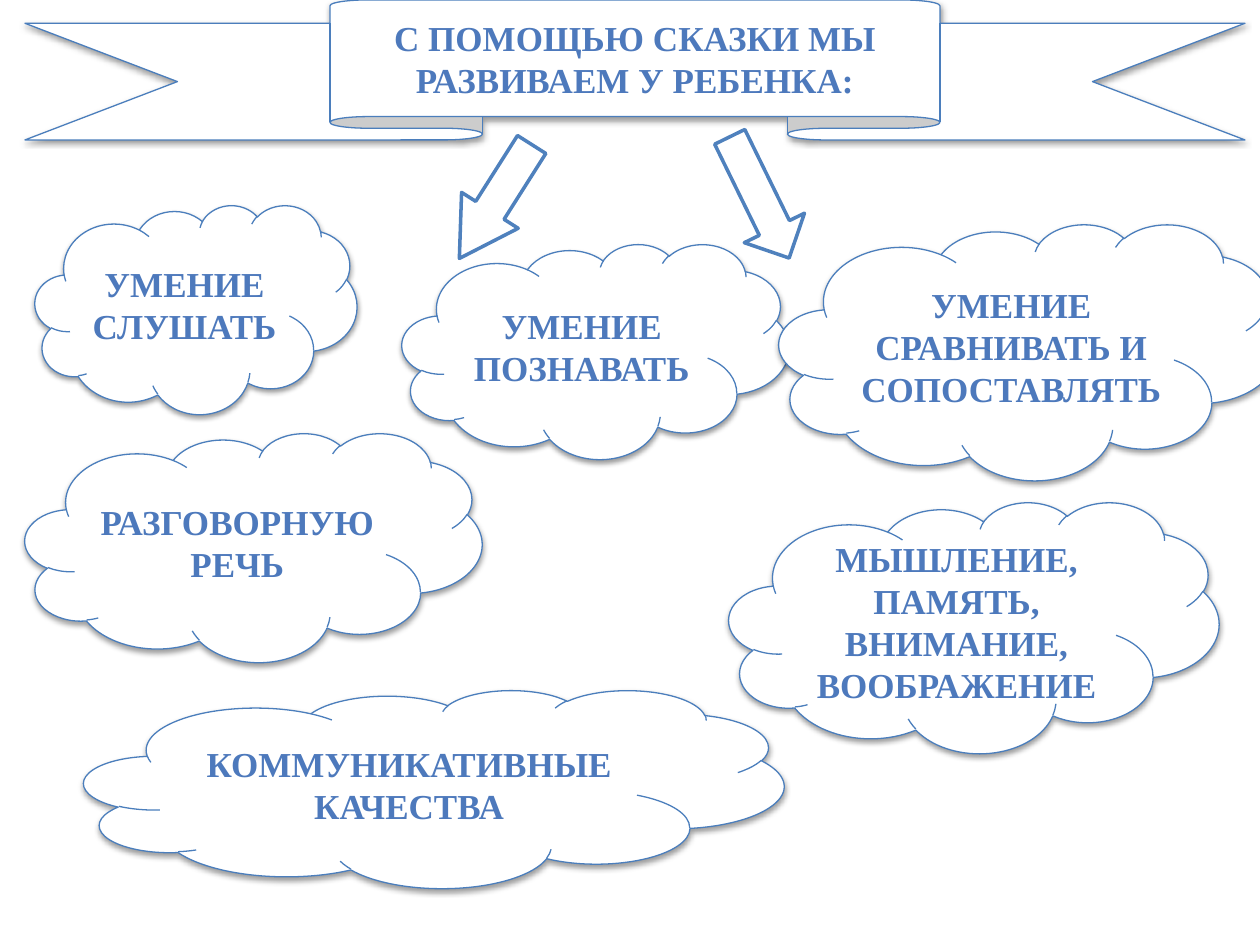
from dataclasses import dataclass

from lxml.etree import SubElement
from pptx import Presentation
from pptx.dml.color import RGBColor
from pptx.enum.shapes import MSO_SHAPE
from pptx.enum.text import MSO_ANCHOR, PP_ALIGN
from pptx.oxml import parse_xml
from pptx.oxml.ns import nsdecls, qn
from pptx.shapes.autoshape import Shape
from pptx.util import Emu, Pt

PIXELS_PER_INCH = 126
COLORS = {
    "paper": "FFFFFF",
    "outline": "4B7EBC",
    "arrow": "4F81BD",
    "shadow": "000000",
}
TEXT_GRADIENT = {0: "7494C9", 49: "4D79BC", 50: "346AAA", 92: "325F94", 100: "315D91"}


@dataclass(frozen=True)
class Box:
    left: int
    top: int
    width: int
    height: int


@dataclass(frozen=True)
class Caption:
    text: str
    box: Box
    preset: MSO_SHAPE = MSO_SHAPE.CLOUD
    side_inset: int = 13


@dataclass(frozen=True)
class Arrow:
    box: Box
    rotation: float
    head: float = 0.5


CAPTIONS = [
    Caption("С ПОМОЩЬЮ СКАЗКИ МЫ РАЗВИВАЕМ У РЕБЕНКА:", Box(25, 0, 1220, 140), MSO_SHAPE.UP_RIBBON),
    Caption("УМЕНИЕ СЛУШАТЬ", Box(35, 205, 322, 209)),
    Caption("УМЕНИЕ ПОЗНАВАТЬ", Box(402, 244, 387, 215)),
    Caption("УМЕНИЕ СРАВНИВАТЬ И СОПОСТАВЛЯТЬ", Box(779, 224, 500, 256)),
    Caption("РАЗГОВОРНУЮ РЕЧЬ", Box(25, 433, 457, 229), side_inset=8),
    Caption("КОММУНИКАТИВНЫЕ КАЧЕСТВА", Box(84, 690, 700, 198)),
    Caption("МЫШЛЕНИЕ, ПАМЯТЬ, ВНИМАНИЕ, ВООБРАЖЕНИЕ", Box(729, 502, 490, 251)),
]
ARROWS = [
    Arrow(Box(462, 134, 67, 135), 32.4, head=0.85),
    Arrow(Box(726, 130, 67, 135), 333.9),
]


def px(value: int) -> Emu:
    return Emu(round(value * 914400 / PIXELS_PER_INCH))


def add_outlined_shape(slide, preset: MSO_SHAPE, box: Box, *, line: str, weight: float) -> Shape:
    shape = slide.shapes.add_shape(
        preset, px(box.left), px(box.top), px(box.width), px(box.height)
    )
    shape.shadow.inherit = False
    shape.fill.solid()
    shape.fill.fore_color.rgb = RGBColor.from_string(COLORS["paper"])
    shape.line.color.rgb = RGBColor.from_string(COLORS[line])
    shape.line.width = Pt(weight)
    return shape


def add_shadow(shape: Shape) -> None:
    effects = shape._element.spPr.find(qn("a:effectLst"))
    shadow = SubElement(
        effects, qn("a:outerShdw"), blurRad=str(Pt(3.1)), dist=str(Pt(1.6)),
        dir="5400000", rotWithShape="0",
    )
    color = SubElement(shadow, qn("a:srgbClr"), val=COLORS["shadow"])
    SubElement(color, qn("a:alpha"), val="38000")


def write_text(shape: Shape, text: str, *, font: str, size: int, bold: bool,
               side_inset: int, gradient: dict[int, str]) -> None:
    """Centre the text in the shape and colour it with a vertical gradient."""
    frame = shape.text_frame
    frame.word_wrap = True
    frame.vertical_anchor = MSO_ANCHOR.MIDDLE
    frame.margin_left = frame.margin_right = px(side_inset)
    paragraph = frame.paragraphs[0]
    paragraph.alignment = PP_ALIGN.CENTER
    run = paragraph.add_run()
    run.text = text
    run.font.name = font
    run.font.size = Pt(size)
    run.font.bold = bold
    stops = "".join(
        f'<a:gs pos="{position * 1000}"><a:srgbClr val="{color}"/></a:gs>'
        for position, color in gradient.items()
    )
    fill = parse_xml(
        f'<a:gradFill {nsdecls("a")}><a:gsLst>{stops}</a:gsLst>'
        '<a:lin ang="5400000" scaled="0"/></a:gradFill>'
    )
    run._r.get_or_add_rPr().insert(0, fill)


def add_caption(slide, caption: Caption) -> None:
    shape = add_outlined_shape(slide, caption.preset, caption.box, line="outline", weight=0.75)
    add_shadow(shape)
    write_text(shape, caption.text, font="Times New Roman", size=20, bold=True,
               side_inset=caption.side_inset, gradient=TEXT_GRADIENT)


def add_arrow(slide, arrow: Arrow) -> None:
    shape = add_outlined_shape(slide, MSO_SHAPE.DOWN_ARROW, arrow.box, line="arrow", weight=2)
    shape.adjustments[1] = arrow.head
    shape.rotation = arrow.rotation


def main() -> None:
    presentation = Presentation()
    presentation.slide_width = px(1260)
    presentation.slide_height = px(945)
    slide = presentation.slides.add_slide(presentation.slide_layouts[6])
    for caption in CAPTIONS:
        add_caption(slide, caption)
    for arrow in ARROWS:
        add_arrow(slide, arrow)
    presentation.save("out.pptx")


if __name__ == "__main__":
    main()
